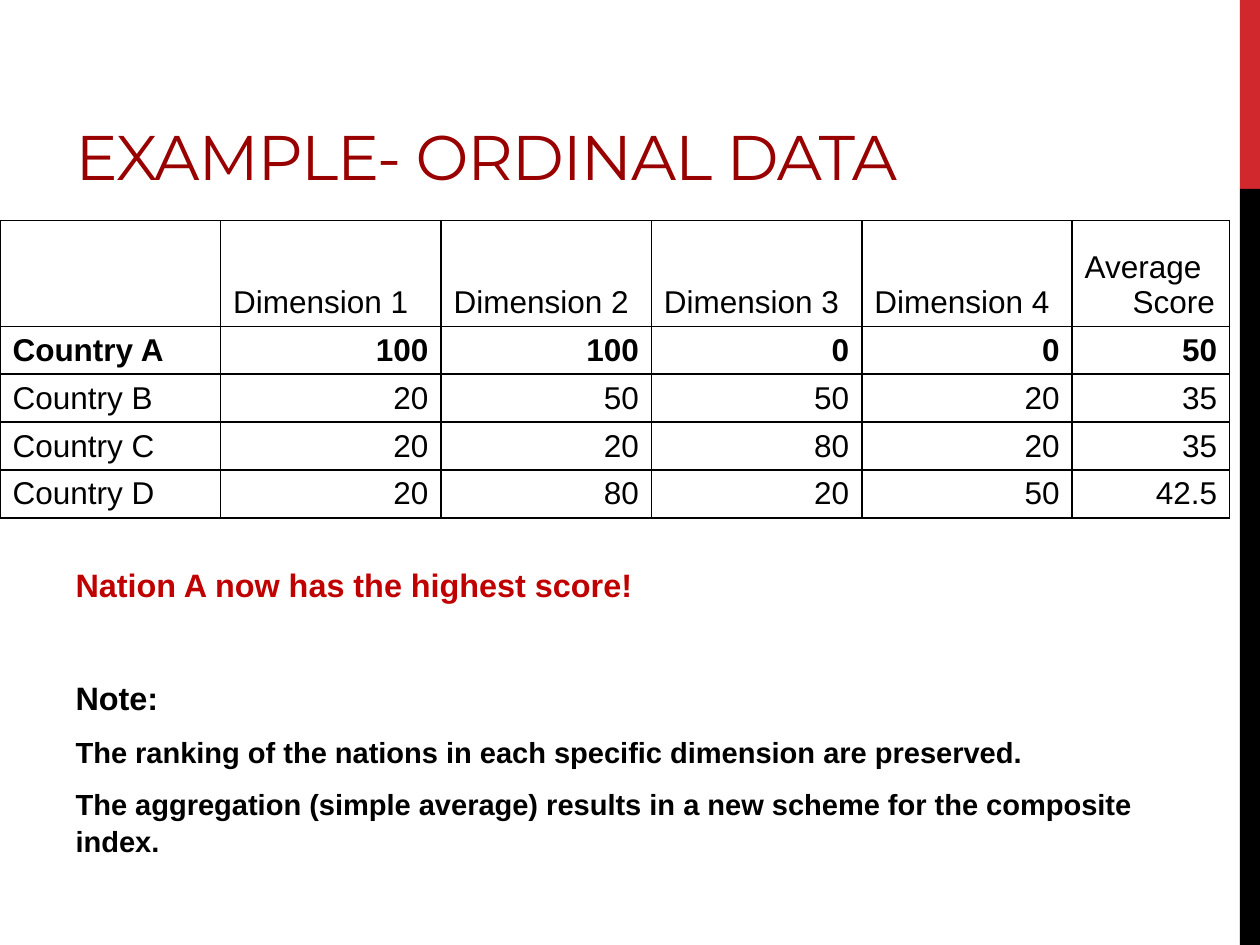
"""Build a slide showing how ordinal scores change a composite country index."""
from lxml.etree import SubElement
from pptx import Presentation
from pptx.dml.color import RGBColor
from pptx.enum.shapes import MSO_SHAPE
from pptx.enum.text import MSO_ANCHOR, MSO_AUTO_SIZE, PP_ALIGN
from pptx.oxml.ns import qn
from pptx.util import Inches, Pt

BLACK = RGBColor(0, 0, 0)
BAR_RED = RGBColor(0xD1, 0x28, 0x2E)
TITLE_RED = RGBColor(0x99, 0, 0)
ACCENT_RED = RGBColor(0xC0, 0, 0)

deck = Presentation()
deck.slide_width, deck.slide_height = Inches(10), Inches(7.5)
WIDTH, HEIGHT = deck.slide_width, deck.slide_height
MARGIN = WIDTH // 20
page = deck.slides.add_slide(deck.slide_layouts[1])


def place(box, left, top, width, height):
    box.left, box.top, box.width, box.height = left, top, width, height


def add_span(para, text, size, color, bold=False, font="Arial"):
    span = para.add_run()
    span.text = text
    span.font.name, span.font.size, span.font.bold = font, Pt(size), bold
    span.font.color.rgb = color
    return span


bar_left = Inches(9.84)
for top, height, color in ((0, HEIGHT // 5, BAR_RED), (HEIGHT // 5, HEIGHT * 4 // 5, BLACK)):
    bar = page.shapes.add_shape(MSO_SHAPE.RECTANGLE, bar_left, top, WIDTH - bar_left, height)
    bar.shadow.inherit = False
    bar.fill.solid()
    bar.fill.fore_color.rgb = color
    bar.line.fill.background()

title = page.shapes.title
place(title, MARGIN, Inches(0.33), WIDTH - 2 * MARGIN, HEIGHT // 6)
title.text_frame.auto_size = MSO_AUTO_SIZE.NONE
title.text_frame.vertical_anchor = MSO_ANCHOR.BOTTOM
title_para = title.text_frame.paragraphs[0]
title_para.alignment = PP_ALIGN.LEFT
title_span = add_span(title_para, "EXAMPLE- ORDINAL DATA", 36, TITLE_RED, font="Montserrat")
title_span.font._element.set("spc", "-60")

NOTES = (
    ("Nation A now has the highest score!", 18.5, ACCENT_RED, 3.7),
    ("Note:", 18.5, BLACK, 35.5),
    ("The ranking of the nations in each specific dimension are preserved.", 16.6, BLACK, 3.3),
    ("The aggregation (simple average) results in a new scheme for the composite index.",
     16.6, BLACK, 3.3),
)
body = page.placeholders[1]
place(body, MARGIN, Inches(4.42), WIDTH - 2 * MARGIN, Inches(2.28))
frame = body.text_frame
frame.auto_size = MSO_AUTO_SIZE.NONE
for index, (text, size, color, before) in enumerate(NOTES):
    para = frame.add_paragraph() if index else frame.paragraphs[0]
    para.line_spacing = 1.04
    para.space_before, para.space_after = Pt(before), Pt(6)
    properties = para._p.get_or_add_pPr()
    properties.set("marL", "0")
    properties.set("indent", "0")
    SubElement(properties, qn("a:buNone"))
    add_span(para, text, size, color, bold=True)

ROWS = (
    ("", "Dimension 1", "Dimension 2", "Dimension 3", "Dimension 4", "Average Score"),
    ("Country A", "100", "100", "0", "0", "50"),
    ("Country B", "20", "50", "50", "20", "35"),
    ("Country C", "20", "20", "80", "20", "35"),
    ("Country D", "20", "80", "20", "50", "42.5"),
)
COLUMN_WIDTHS = [1.75] * 2 + [1.67] * 3 + [1.25]
ROW_HEIGHTS = [0.84] + [0.38] * 4
table = page.shapes.add_table(
    len(ROWS), len(COLUMN_WIDTHS), 0, Inches(1.75),
    Inches(sum(COLUMN_WIDTHS)), Inches(sum(ROW_HEIGHTS))).table
table.first_row = table.horz_banding = False
for column, width in zip(table.columns, COLUMN_WIDTHS):
    column.width = Inches(width)
for row, height in zip(table.rows, ROW_HEIGHTS):
    row.height = Inches(height)

for row_index, values in enumerate(ROWS):
    for column_index, value in enumerate(values):
        cell = table.cell(row_index, column_index)
        cell.vertical_anchor = MSO_ANCHOR.BOTTOM
        cell_properties = cell._tc.get_or_add_tcPr()
        for side in ("L", "R", "T", "B"):
            border = SubElement(cell_properties, qn(f"a:ln{side}"), w=str(Pt(1)))
            fill = SubElement(border, qn("a:solidFill"))
            SubElement(fill, qn("a:srgbClr"), val=str(BLACK))
        cell.fill.background()
        if not value:
            continue
        para = cell.text_frame.paragraphs[0]
        is_number = row_index > 0 and column_index > 0
        para.alignment = PP_ALIGN.RIGHT if is_number else PP_ALIGN.LEFT
        properties = para._p.get_or_add_pPr()
        properties.set("marL", str(Inches(0.38)))
        properties.set("indent", str(-Inches(0.38)))
        add_span(para, value, 18, BLACK, bold=row_index == 1)

deck.save("out.pptx")
